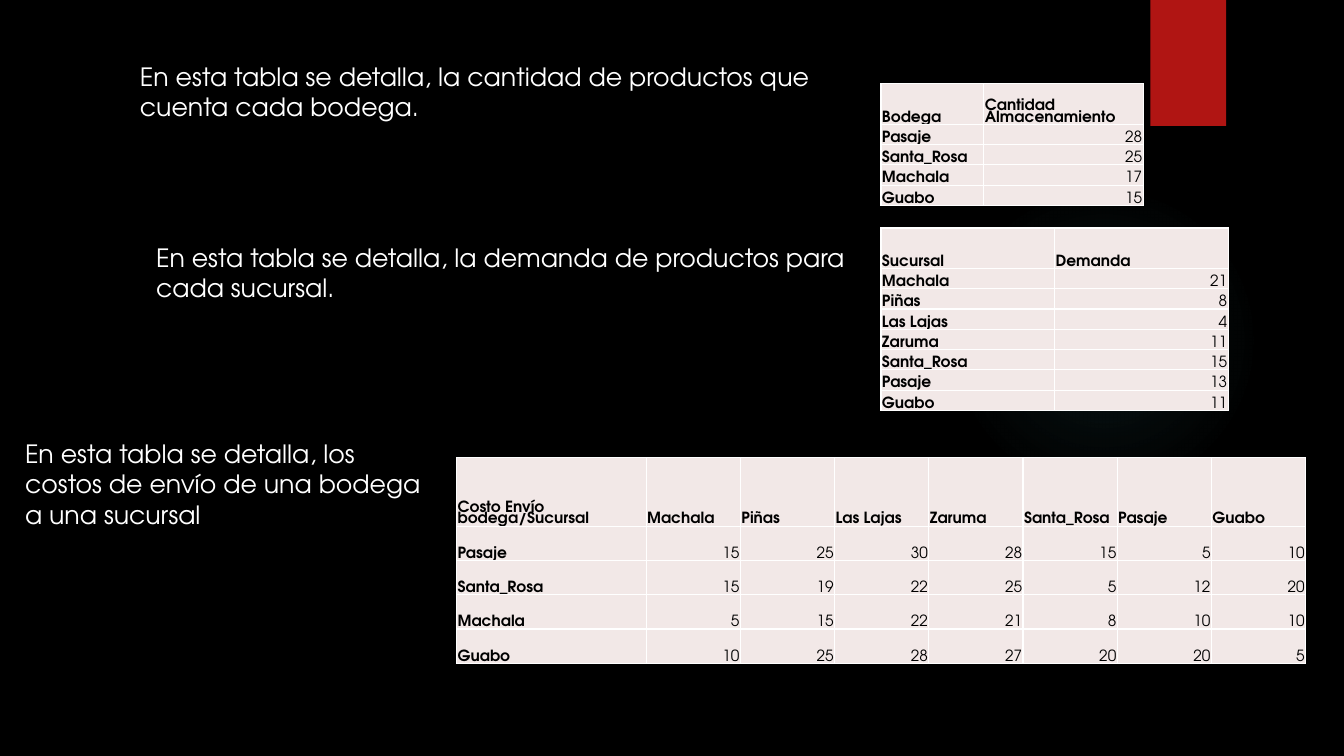
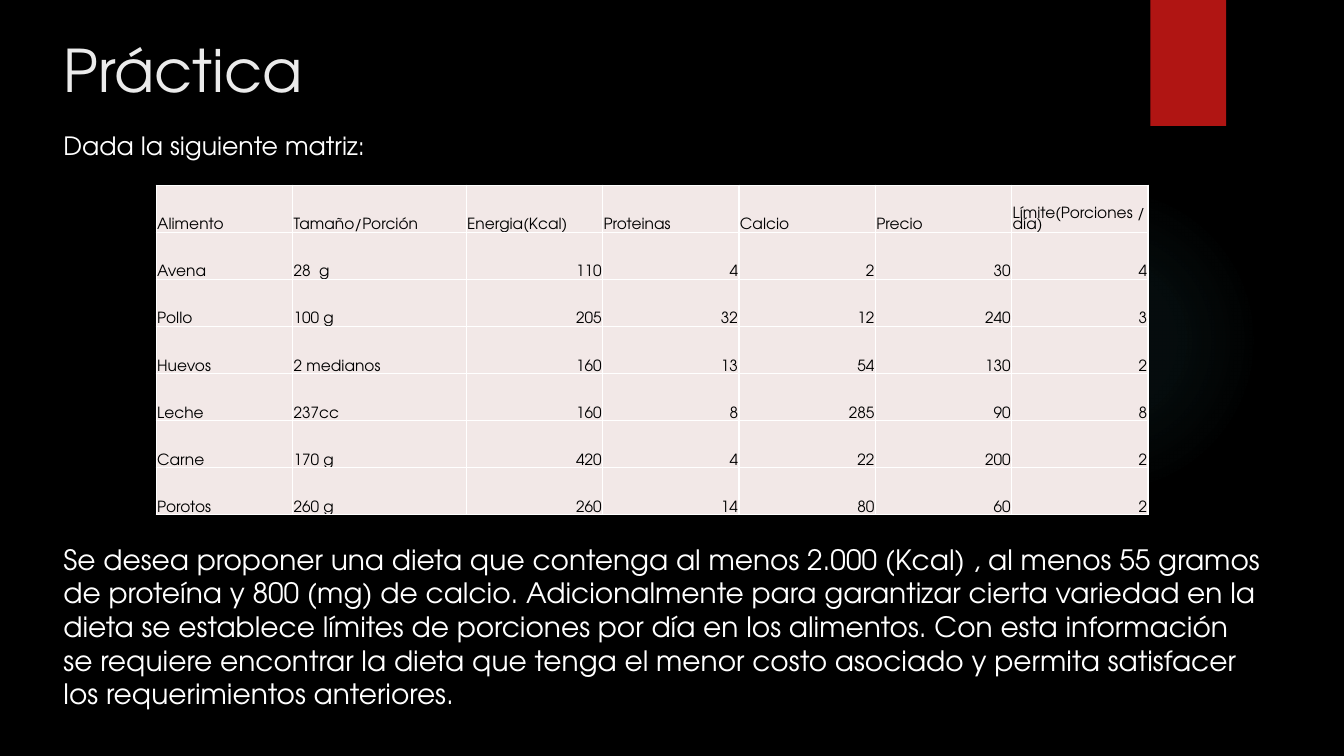
from pptx import Presentation
from pptx import util as u
from pptx.dml.color import RGBColor
from pptx.enum import shapes, text
from pptx.oxml import parse_xml
from pptx.oxml.ns import nsdecls, qn

COLOURS = {
    "background": "000000",
    "glow": "50B9C1",
    "band": "B01513",
    "title": "EBEBEB",
    "body": "FFFFFF",
    "cell": "F2E8E7",
    "cell_text": "000000",
    "border": "FFFFFF",
    "shadow": "000000",
}
FONT = "TeX Gyre Adventor"
TITLE_ONLY, BLANK = 5, 6

CELL_FORMAT = {
    "vertical_anchor": text.MSO_ANCHOR.BOTTOM,
    "margin_left": u.Pt(0.7),
    "margin_right": u.Pt(0.7),
    "margin_top": u.Pt(0.7),
    "margin_bottom": u.Pt(0),
}
TABLE_FORMAT = {"first_row": False, "horz_banding": False}
TEXT_BOX_FORMAT = {"word_wrap": True, "auto_size": text.MSO_AUTO_SIZE.SHAPE_TO_FIT_TEXT}
TITLE_FORMAT = {
    "word_wrap": True,
    "auto_size": text.MSO_AUTO_SIZE.NONE,
    "vertical_anchor": text.MSO_ANCHOR.TOP,
}

# Table contents
STOCK = [
    ["Bodega", "Cantidad\nAlmacenamiento"],
    ["Pasaje", 28],
    ["Santa_Rosa", 25],
    ["Machala", 17],
    ["Guabo", 15],
]
DEMAND = [
    ["Sucursal", "Demanda"],
    ["Machala", 21],
    ["Piñas", 8],
    ["Las Lajas", 4],
    ["Zaruma", 11],
    ["Santa_Rosa", 15],
    ["Pasaje", 13],
    ["Guabo", 11],
]
SHIPPING = [
    ["Costo Envío\nbodega/Sucursal"] + [row[0] for row in DEMAND[1:]],
    ["Pasaje", 15, 25, 30, 28, 15, 5, 10],
    ["Santa_Rosa", 15, 19, 22, 25, 5, 12, 20],
    ["Machala", 5, 15, 22, 21, 8, 10, 10],
    ["Guabo", 10, 25, 28, 27, 20, 20, 5],
]
FOODS = [
    ["Alimento", "Tamaño/Porción", "Energia(Kcal)", "Proteinas", "Calcio", "Precio",
     "Límite(Porciones / día)"],
    ["Avena", "28  g", 110, 4, 2, 30, 4],
    ["Pollo", "100 g", 205, 32, 12, 240, 3],
    ["Huevos", "2 medianos", 160, 13, 54, 130, 2],
    ["Leche", "237cc", 160, 8, 285, 90, 8],
    ["Carne", "170 g", 420, 4, 22, 200, 2],
    ["Porotos", "260 g", 260, 14, 80, 60, 2],
]
DIET_TASK = (
    "Se desea proponer una dieta que contenga al menos 2.000 (Kcal) , al menos 55 gramos "
    "de proteína y 800 (mg) de calcio. Adicionalmente para garantizar cierta variedad en la "
    "dieta se establece límites de porciones por día en los alimentos. Con esta información "
    "se requiere encontrar la dieta que tenga el menor costo asociado y permita satisfacer "
    "los requerimientos anteriores."
)


def rgb(name):
    return RGBColor.from_string(COLOURS[name])


def set_format(target, values):
    for name, value in values.items():
        setattr(target, name, value)


def write(frame, content, size, colour, bold=False, paragraph_format=None):
    frame.text = content
    for paragraph in frame.paragraphs:
        set_format(paragraph, paragraph_format or {})
        for run in paragraph.runs:
            set_format(run.font, {"name": FONT, "size": u.Pt(size), "bold": bold})
            run.font.color.rgb = rgb(colour)


def add_plain_shape(slide, kind, box, colour):
    shape = slide.shapes.add_shape(kind, *map(u.Pt, box))
    shape.shadow.inherit = False
    shape.line.fill.background()
    shape.fill.solid()
    shape.fill.fore_color.rgb = rgb(colour)
    return shape


# Glow and red band that every slide carries
def add_decoration(slide):
    glow = add_plain_shape(slide, shapes.MSO_SHAPE.OVAL, (677.5, 131.8, 221.8, 221.8), "glow")
    stops = "".join(
        f'<a:gs pos="{position * 1000}"><a:srgbClr val="{COLOURS["glow"]}">'
        f'<a:alpha val="{alpha * 1000}"/></a:srgbClr></a:gs>'
        for position, alpha in ((0, 7), (36, 6), (69, 0))
    )
    gradient = parse_xml(
        f'<a:gradFill {nsdecls("a")}><a:gsLst>{stops}</a:gsLst><a:path path="circle">'
        '<a:fillToRect l="50000" t="50000" r="50000" b="50000"/></a:path></a:gradFill>'
    )
    properties = glow.element.spPr
    properties.replace(properties.find(qn("a:solidFill")), gradient)

    band = add_plain_shape(slide, shapes.MSO_SHAPE.RECTANGLE, (821.8, 0, 54, 90), "band")
    band.element.spPr.find(qn("a:effectLst")).append(parse_xml(
        f'<a:outerShdw {nsdecls("a")} blurRad="{u.Pt(3)}" dist="{u.Pt(2)}" dir="5400000">'
        f'<a:srgbClr val="{COLOURS["shadow"]}"><a:alpha val="45000"/></a:srgbClr></a:outerShdw>'
    ))


def add_slide(presentation, layout):
    slide = presentation.slides.add_slide(presentation.slide_layouts[layout])
    add_decoration(slide)
    return slide


def add_title(slide, content, box):
    title = slide.shapes.title
    set_format(title, dict(zip(("left", "top", "width", "height"), map(u.Pt, box))))
    set_format(title.text_frame, TITLE_FORMAT)
    write(title.text_frame, content, 42, "title",
          paragraph_format={"alignment": text.PP_ALIGN.LEFT})


def add_text(slide, content, box, size=18):
    frame = slide.shapes.add_textbox(*map(u.Pt, box)).text_frame
    set_format(frame, TEXT_BOX_FORMAT)
    write(frame, content, size, "body")


def add_borders(cell):
    properties = cell._tc.get_or_add_tcPr()
    for side in "LRTB":
        properties.append(parse_xml(
            f'<a:ln{side} {nsdecls("a")} w="{u.Pt(1)}"><a:solidFill>'
            f'<a:srgbClr val="{COLOURS["border"]}"/></a:solidFill></a:ln{side}>'
        ))


def fill_cell(cell, value, bold):
    set_format(cell, CELL_FORMAT)
    add_borders(cell)
    cell.fill.solid()
    cell.fill.fore_color.rgb = rgb("cell")
    side = text.PP_ALIGN.RIGHT if isinstance(value, int) else text.PP_ALIGN.LEFT
    write(cell.text_frame, str(value), 11, "cell_text", bold,
          {"alignment": side, "line_spacing": 0.8})


def add_data_table(slide, rows, position, widths, header_height, row_height, bold_labels=True):
    heights = [header_height] + [row_height] * (len(rows) - 1)
    box = (*position, sum(widths), sum(heights))
    table = slide.shapes.add_table(len(rows), len(widths), *map(u.Pt, box)).table
    set_format(table, TABLE_FORMAT)
    for column, width in zip(table.columns, widths):
        column.width = u.Pt(width)
    for row, height, values in zip(table.rows, heights, rows):
        row.height = u.Pt(height)
        for cell, value in zip(row.cells, values):
            fill_cell(cell, value, bold_labels and isinstance(value, str))


def add_transport_slide(presentation):
    slide = add_slide(presentation, BLANK)
    add_data_table(slide, STOCK, (629.3, 59.8), [73.5, 113.8], 29, 14.5)
    add_data_table(slide, DEMAND, (629.3, 162.8), [124, 124], 29, 14.5)
    add_data_table(slide, SHIPPING, (326.2, 326.9), [135.4] + [67.3] * 7, 49, 24.5)
    add_text(slide, "En esta tabla se detalla, la cantidad de productos que cuenta cada bodega.",
             (92.9, 40.3, 515.5, 51))
    add_text(slide, "En esta tabla se detalla, la demanda de productos para cada sucursal.",
             (104.4, 169.2, 515.5, 51))
    add_text(slide, "En esta tabla se detalla, los costos de envío de una bodega a una sucursal",
             (10.8, 309.6, 306.7, 72.7))


def add_practice_slide(presentation):
    slide = add_slide(presentation, TITLE_ONLY)
    left = 38.2
    add_title(slide, "Práctica", (left, 20.2, 740.9, 61.9))
    add_data_table(slide, FOODS, (111.6, 132.3), [97.4, 124.1] + [97.4] * 5, 33.6, 33.6,
                   bold_labels=False)
    add_text(slide, DIET_TASK, (left, 383.8, 871.9, 128.2), size=20)
    add_text(slide, "Dada la siguiente matriz:", (left, 89.3, 330.5, 28.8))


def main():
    presentation = Presentation()
    set_format(presentation, {"slide_width": u.Pt(960), "slide_height": u.Pt(540)})
    background = presentation.slide_master.background.fill
    background.solid()
    background.fore_color.rgb = rgb("background")
    add_transport_slide(presentation)
    add_practice_slide(presentation)
    presentation.save("out.pptx")


if __name__ == "__main__":
    main()
